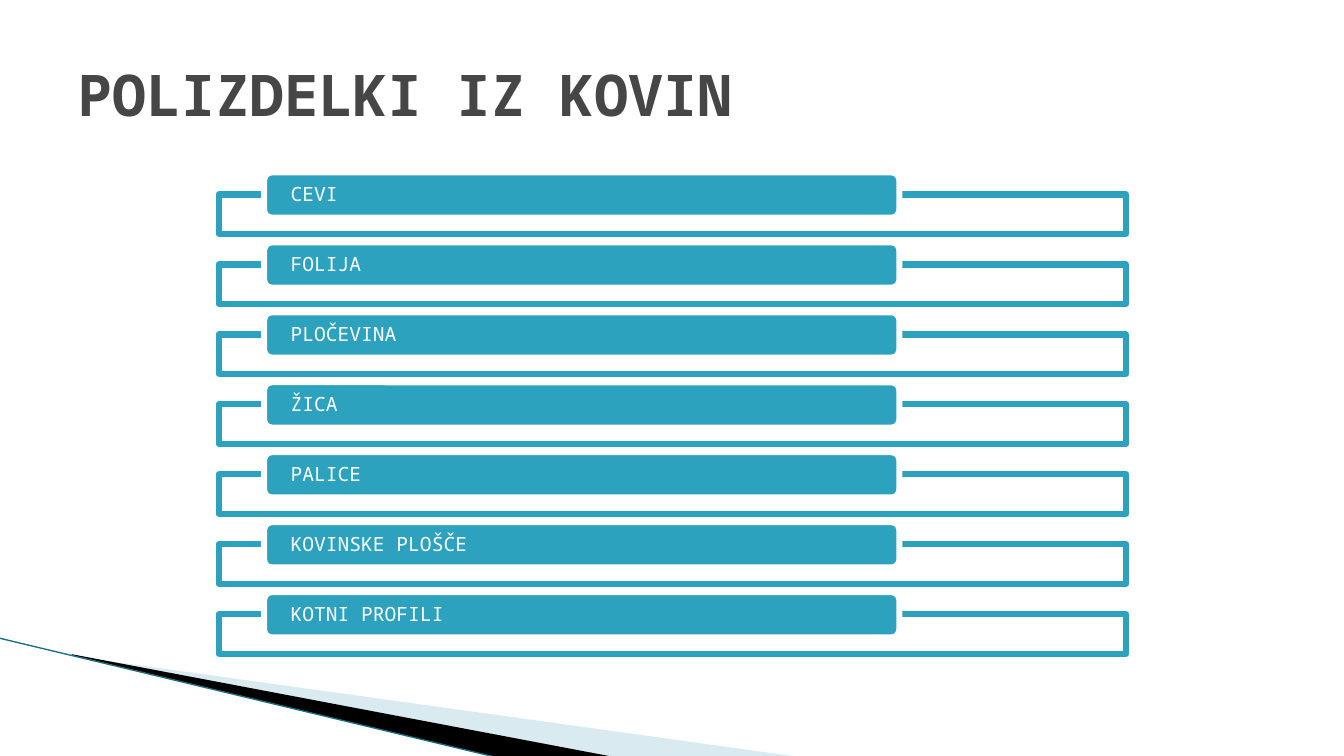
from lxml import etree
from pptx import Presentation
from pptx.dml.color import RGBColor
from pptx.enum.shapes import MSO_CONNECTOR, MSO_SHAPE
from pptx.enum.text import MSO_ANCHOR, PP_ALIGN
from pptx.oxml.ns import qn
from pptx.util import Inches, Pt

FONT = "Noto Sans Mono"
TEAL = "2DA2BF"
WHITE = "FFFFFF"


def rgb(value):
    return RGBColor.from_string(value)


def paint(sp, fill, line=None, alpha=100):
    sp.shadow.inherit = False
    sp.fill.solid()
    sp.fill.fore_color.rgb = rgb(fill)
    if alpha < 100:
        color = sp._element.spPr.find(qn("a:solidFill"))[0]
        etree.SubElement(color, qn("a:alpha"), val=str(alpha * 1000))
    if line:
        sp.line.color.rgb = rgb(line)
        sp.line.width = Pt(4.33)
    else:
        sp.line.fill.background()


prs = Presentation()
prs.slide_width, prs.slide_height = Inches(13.33), Inches(7.5)
s = prs.slides.add_slide(prs.slide_layouts[6])

wedges = [
    ([(0.73, 6.51), (7.93, 7.51), (6.08, 7.51), (0.73, 6.5)], "A0CBDC", 40),
    ([(0.71, 6.49), (6.09, 7.51), (4.96, 7.52), (0.72, 6.5)], "000000", 100),
]
for points, color, alpha in wedges:
    corners = [(Inches(x), Inches(y)) for x, y in points]
    outline = s.shapes.build_freeform(*corners[0])
    outline.add_line_segments(corners[1:], close=True)
    paint(outline.convert_to_shape(), color, alpha=alpha)

edge = s.shapes.add_connector(
    MSO_CONNECTOR.STRAIGHT, Inches(-0.01), Inches(6.33), Inches(4.95), Inches(7.52))
edge.line.color.rgb = rgb("1A6E80")
edge.line.width = Pt(0.95)
etree.SubElement(edge._element.spPr, qn("a:effectLst"))

products = ["CEVI", "FOLIJA", "PLOČEVINA", "ŽICA", "PALICE", "KOVINSKE PLOŠČE", "KOTNI PROFILI"]
first_top, pitch = 1.71, 0.694
for i, product in enumerate(products):
    top = first_top + i * pitch
    frame = s.shapes.add_shape(
        MSO_SHAPE.RECTANGLE, Inches(2.17), Inches(top + 0.22), Inches(9), Inches(0.39))
    paint(frame, WHITE, TEAL, 90)

    label = s.shapes.add_shape(
        MSO_SHAPE.ROUNDED_RECTANGLE, Inches(2.62), Inches(top), Inches(6.3), Inches(0.45))
    paint(label, TEAL, WHITE)
    tf = label.text_frame
    tf.word_wrap = True
    tf.vertical_anchor = MSO_ANCHOR.MIDDLE
    tf.margin_left = tf.margin_right = Inches(0.24)
    tf.margin_top = tf.margin_bottom = 0
    p = tf.paragraphs[0]
    p.text = product
    p.alignment = PP_ALIGN.LEFT
    p.line_spacing = 0.9
    p.font.name = FONT
    p.font.size = Pt(14)
    p.font.color.rgb = rgb(WHITE)

title = s.shapes.add_textbox(Inches(0.67), Inches(0.3), Inches(12), Inches(1.25))
tf = title.text_frame
tf.word_wrap = True
tf.vertical_anchor = MSO_ANCHOR.MIDDLE
p = tf.paragraphs[0]
p.text = "POLIZDELKI IZ KOVIN"
p.font.name = FONT
p.font.size = Pt(41)
p.font.bold = True
p.font.color.rgb = rgb("464646")

prs.save("out.pptx")
